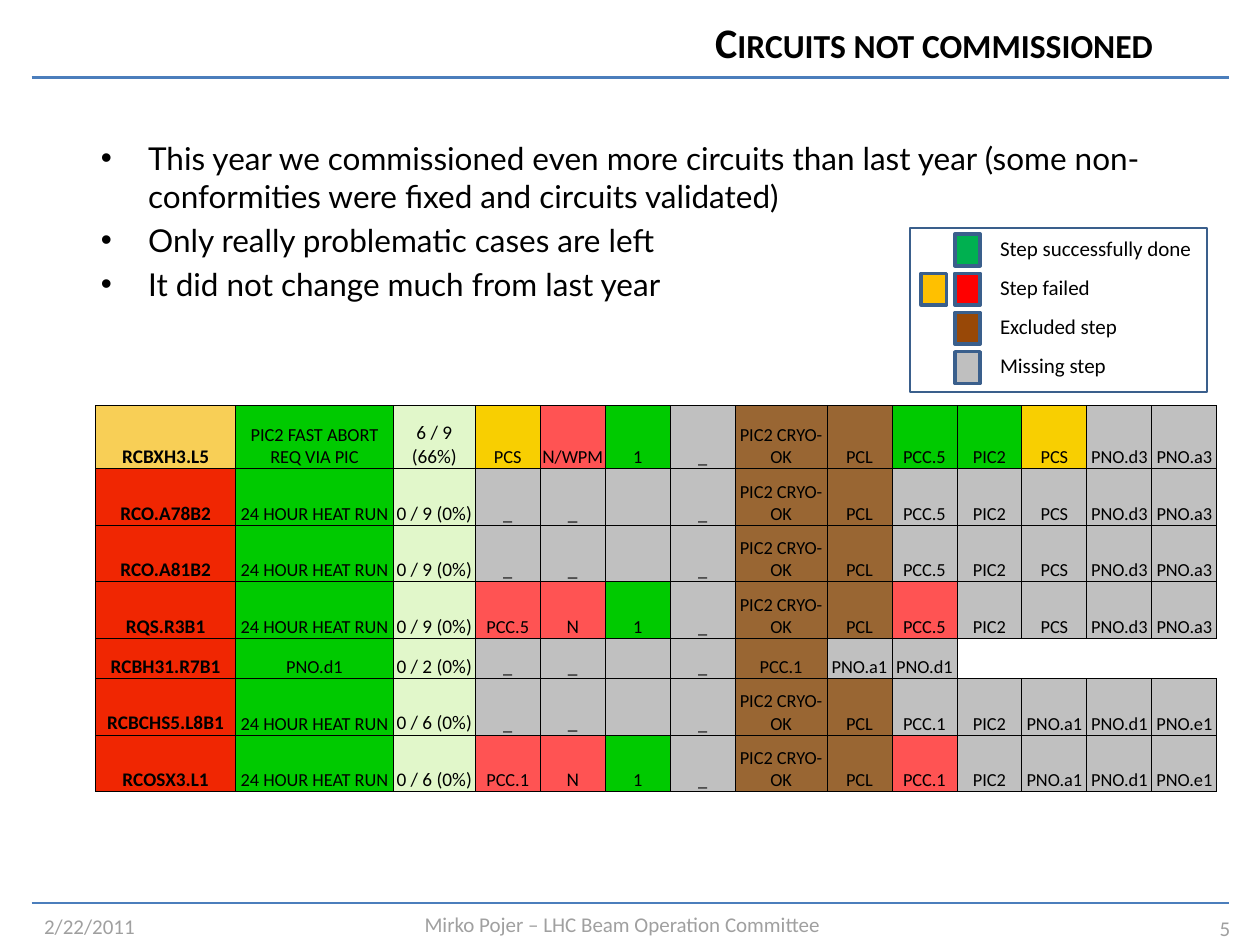
from dataclasses import dataclass

from lxml.etree import SubElement
from pptx import Presentation
from pptx.dml.color import RGBColor
from pptx.enum.shapes import MSO_CONNECTOR, MSO_SHAPE
from pptx.enum.text import MSO_ANCHOR, MSO_AUTO_SIZE, PP_ALIGN
from pptx.oxml.ns import qn
from pptx.util import Cm, Pt


@dataclass(frozen=True)
class Theme:
    font: str = "Calibri"
    body_font: str = "Lato"
    black: str = "000000"
    muted: str = "A0A0A0"
    rule: str = "4B7EBC"
    outline: str = "3A5F8C"
    done: str = "00B050"
    failed: str = "FF0000"
    partly_failed: str = "FFC000"
    excluded: str = "984807"
    missing: str = "BFBFBF"
    title_size: float = 24
    body_size: float = 18
    label_size: float = 12
    key_size: float = 11
    step_size: float = 10.5


theme = Theme()
STEP_FILLS = {
    "A": "F8CF56", "O": "F02602", "G": "00CA00", "L": "E1F7CA",
    "Y": "F8CF01", "R": "FF5353", "X": "C0C0C0", "B": "996633",
}


def write(paragraph, text, size=theme.label_size, color=theme.black,
          font=theme.font, bold=False, align=PP_ALIGN.LEFT):
    paragraph.alignment = align
    run = paragraph.add_run()
    run.text = text
    run.font.name = font
    run.font.size = Pt(size)
    run.font.bold = bold
    run.font.color.rgb = RGBColor.from_string(color)
    return run


def add_box(left, top, width, height, line_width, fill=None):
    box = slide.shapes.add_shape(
        MSO_SHAPE.RECTANGLE, Cm(left), Cm(top), Cm(width), Cm(height))
    box.shadow.inherit = False
    box.line.color.rgb = RGBColor.from_string(theme.outline)
    box.line.width = Pt(line_width)
    if fill:
        box.fill.solid()
        box.fill.fore_color.rgb = RGBColor.from_string(fill)
    else:
        box.fill.background()


deck = Presentation()
deck.slide_width, deck.slide_height = Cm(25.4), Cm(19.05)
slide = deck.slides.add_slide(deck.slide_layouts[1])

for rule_y in (1.56, 18.2):
    rule = slide.shapes.add_connector(
        MSO_CONNECTOR.STRAIGHT, Cm(0.64), Cm(rule_y), Cm(24.77), Cm(rule_y))
    rule.line.color.rgb = RGBColor.from_string(theme.rule)
    rule.line.width = Pt(1.5)
    SubElement(rule._element.spPr, qn("a:effectLst"))

for text, left, top, width, height, anchor, align in (
    ("2/22/2011", 0.64, 18.26, 4.45, 0.84, MSO_ANCHOR.MIDDLE, PP_ALIGN.LEFT),
    ("5", 22.71, 18.34, 2.34, 0.71, MSO_ANCHOR.TOP, PP_ALIGN.RIGHT),
    ("Mirko Pojer – LHC Beam Operation Committee",
     8.31, 18.21, 8.76, 0.84, MSO_ANCHOR.MIDDLE, PP_ALIGN.LEFT),
):
    footer = slide.shapes.add_textbox(Cm(left), Cm(top), Cm(width), Cm(height)).text_frame
    footer.word_wrap = True
    footer.vertical_anchor = anchor
    write(footer.paragraphs[0], text, color=theme.muted, align=align)

title = slide.shapes.title
title.left, title.top, title.width, title.height = Cm(1.07), Cm(0.2), Cm(22.43), Cm(1.35)
title.text_frame.auto_size = MSO_AUTO_SIZE.NONE
title.text_frame.vertical_anchor = MSO_ANCHOR.TOP
heading = write(title.text_frame.paragraphs[0], "Circuits not commissioned",
                size=theme.title_size, bold=True, align=PP_ALIGN.RIGHT)
heading.font._element.set("cap", "small")

findings = slide.placeholders[1]
findings.left, findings.top, findings.width, findings.height = (
    Cm(1.78), Cm(2.67), Cm(22.5), Cm(3.12))
findings.text_frame.auto_size = MSO_AUTO_SIZE.NONE
for index, finding in enumerate((
    "This year we commissioned even more circuits than last year "
    "(some non-conformities were fixed and circuits validated)",
    "Only really problematic cases are left",
    "It did not change much from last year",
)):
    frame = findings.text_frame
    paragraph = frame.add_paragraph() if index else frame.paragraphs[0]
    paragraph.space_before = Pt(3.6 if index else 0)
    write(paragraph, finding, size=theme.body_size, font=theme.body_font)

circuits = (
    ("RCBXH3.L5|PIC2 FAST ABORT REQ VIA PIC|6 / 9 (66%)|PCS|N|1|_|"
     "PIC2 CRYO-OK|PCL|PCC.5|PIC2|PCS|PNO.d3|PNO.a3", "AGLYRGXBBGGYXX"),
    ("RCO.A78B2|24 HOUR HEAT RUN|0 / 9 (0%)|_|_||_|"
     "PIC2 CRYO-OK|PCL|PCC.5|PIC2|PCS|PNO.d3|PNO.a3", "OGLXXXXBBXXXXX"),
    ("RCO.A81B2|24 HOUR HEAT RUN|0 / 9 (0%)|_|_||_|"
     "PIC2 CRYO-OK|PCL|PCC.5|PIC2|PCS|PNO.d3|PNO.a3", "OGLXXXXBBXXXXX"),
    ("RQS.R3B1|24 HOUR HEAT RUN|0 / 9 (0%)|PCC.5|N|1|_|"
     "PIC2 CRYO-OK|PCL|PCC.5|PIC2|PCS|PNO.d3|PNO.a3", "OGLRRGXBBRXXXX"),
    ("RCBH31.R7B1|PNO.d1|0 / 2 (0%)|_|_||_|"
     "PCC.1|PNO.a1|PNO.d1||||", "OGLXXXXBXX...."),
    ("RCBCHS5.L8B1|24 HOUR HEAT RUN|0 / 6 (0%)|_|_||_|"
     "PIC2 CRYO-OK|PCL|PCC.1|PIC2|PNO.a1|PNO.d1|PNO.e1", "OGLXXXXBBXXXXX"),
    ("RCOSX3.L1|24 HOUR HEAT RUN|0 / 6 (0%)|PCC.1|N|1|_|"
     "PIC2 CRYO-OK|PCL|PCC.1|PIC2|PNO.a1|PNO.d1|PNO.e1", "OGLRRGXBBRXXXX"),
)
column_widths = [2.82, 3.18, 1.65] + [1.31] * 4 + [1.85] + [1.31] * 6
row_heights = [1.27] + [1.14] * 3 + [0.81] + [1.14] * 2
steps = slide.shapes.add_table(
    len(row_heights), len(column_widths), Cm(1.93), Cm(8.18),
    Cm(sum(column_widths)), Cm(sum(row_heights))).table
steps.first_row = steps.horz_banding = False
for column, width in zip(steps.columns, column_widths):
    column.width = Cm(width)

for row, (height, (labels, fills)) in enumerate(zip(row_heights, circuits)):
    steps.rows[row].height = Cm(height)
    for col, (label, code) in enumerate(zip(labels.split("|"), fills)):
        cell = steps.cell(row, col)
        cell.vertical_anchor = MSO_ANCHOR.BOTTOM
        cell.margin_left = cell.margin_right = cell.margin_top = Cm(0.02)
        cell.margin_bottom = 0
        if label:
            write(cell.text_frame.paragraphs[0], label, bold=col == 0,
                  size=theme.key_size if col in (0, 2, 4) else theme.step_size,
                  align=PP_ALIGN.CENTER)
        borders = "LRTB" if code != "." else "LTB" if fills[col - 1] != "." else "TB"
        for side in "LRTB":
            edge = SubElement(cell._tc.get_or_add_tcPr(), qn(f"a:ln{side}"), w="6350")
            if side in borders:
                ink = SubElement(edge, qn("a:solidFill"))
                SubElement(ink, qn("a:srgbClr"), val=theme.black)
            else:
                SubElement(edge, qn("a:noFill"))
        if code == ".":
            cell.fill.background()
        else:
            cell.fill.solid()
            cell.fill.fore_color.rgb = RGBColor.from_string(STEP_FILLS[code])
write(steps.cell(0, 4).text_frame.paragraphs[0], "/WPM",
      size=theme.step_size, align=PP_ALIGN.CENTER)

legend_top, legend_pitch = 4.72, 0.79
for index, (meaning, fill, width) in enumerate((
    ("Step successfully done", theme.done, 4.42),
    ("Step failed", theme.failed, 2.34),
    ("Excluded step", theme.excluded, 2.9),
    ("Missing step", theme.missing, 2.67),
)):
    top = legend_top + index * legend_pitch
    add_box(19.25, top, 0.51, 0.64, 2, fill)
    caption = slide.shapes.add_textbox(Cm(19.91), Cm(top - 0.1), Cm(width), Cm(0.76)).text_frame
    caption.word_wrap = False
    caption.auto_size = MSO_AUTO_SIZE.SHAPE_TO_FIT_TEXT
    write(caption.paragraphs[0], meaning)
add_box(18.57, legend_top + legend_pitch, 0.51, 0.64, 2, theme.partly_failed)
add_box(18.34, 4.6, 5.99, 3.3, 1)

deck.save("out.pptx")
